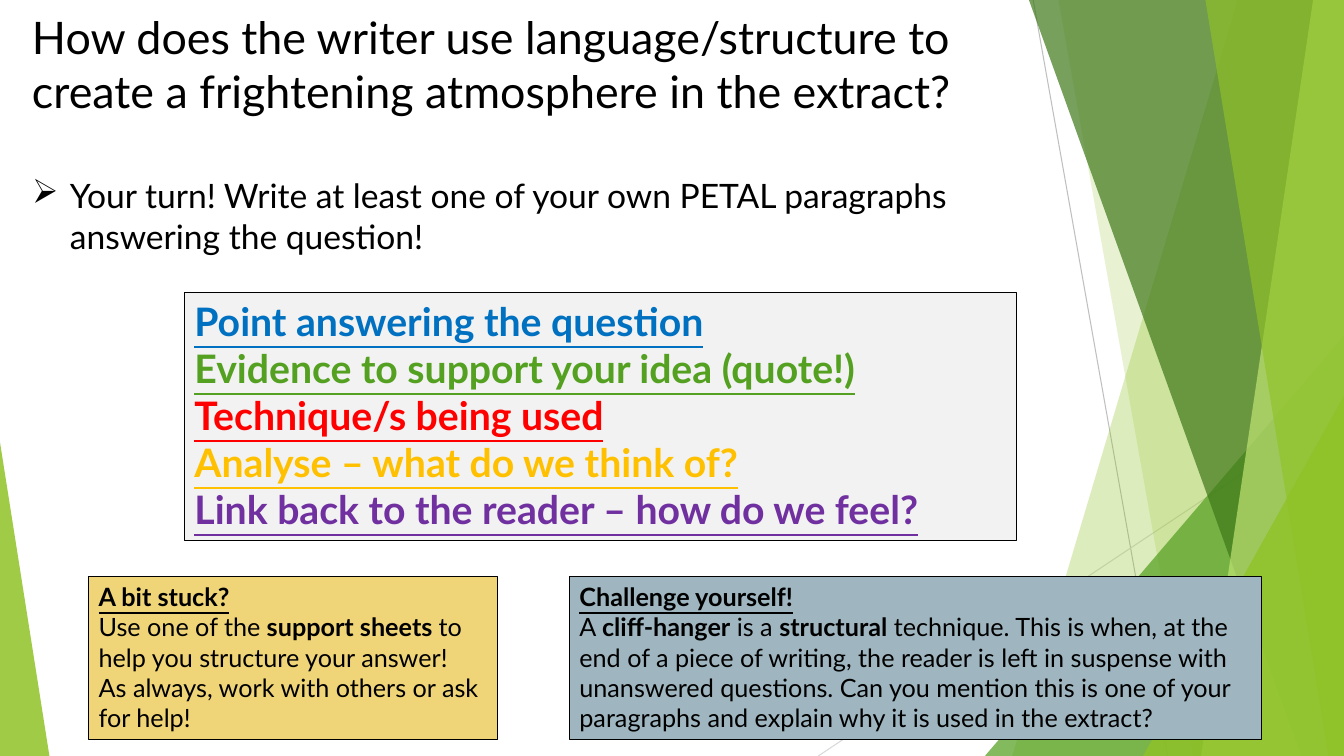
from lxml.etree import SubElement
from pptx import Presentation
from pptx.dml.color import RGBColor
from pptx.enum.shapes import MSO_CONNECTOR, MSO_SHAPE
from pptx.enum.text import MSO_ANCHOR, PP_ALIGN
from pptx.oxml.ns import qn
from pptx.util import Pt

WIDE, HIGH = 960, 540


def color(code):
    return RGBColor.from_string(code)


def write(para, text, size=18, code="000000", bold=False, under=False):
    run = para.add_run()
    run.text = text
    font = run.font
    font.name, font.size = "Lato", Pt(size)
    font.bold, font.underline = bold, under
    font.color.rgb = color(code)


class Painter:
    def __init__(self, slide, edge="000000", width=0.75):
        self.shapes = slide.shapes
        self.edge, self.width = edge, width

    def line(self, start, end, code):
        line = self.shapes.add_connector(
            MSO_CONNECTOR.STRAIGHT, *[Pt(n) for n in start + end])
        line.line.color.rgb = color(code)
        line.line.width = Pt(self.width)
        SubElement(line._element.spPr, qn("a:effectLst"))

    def tint(self, shape, code, alpha):
        shape.shadow.inherit = False
        shape.fill.solid()
        shape.fill.fore_color.rgb = color(code)
        for tag in shape._element.spPr.iter(qn("a:srgbClr")):
            SubElement(tag, qn("a:alpha"), val=str(alpha * 1000))
        shape.line.fill.background()

    def facet(self, top, base, code, alpha):
        """Band from two left corners to the right edge of the slide."""
        form = self.shapes.build_freeform(Pt(top), 0)
        form.add_line_segments([(Pt(WIDE), 0), (Pt(WIDE), Pt(HIGH)),
                                (Pt(base), Pt(HIGH))], close=True)
        self.tint(form.convert_to_shape(), code, alpha)

    def wedge(self, left, top, width, tip, code, alpha):
        """Triangle standing on the bottom edge of the slide."""
        shape = self.shapes.add_shape(
            MSO_SHAPE.ISOSCELES_TRIANGLE,
            Pt(left), Pt(top), Pt(width), Pt(HIGH - top))
        shape.adjustments[0] = tip
        self.tint(shape, code, alpha)

    def fill(self, frame, paras):
        frame.word_wrap = True
        frame.vertical_anchor = MSO_ANCHOR.TOP
        for i, runs in enumerate(paras):
            para = frame.add_paragraph() if i else frame.paragraphs[0]
            para.alignment = PP_ALIGN.LEFT
            for text, style in runs:
                write(para, text, **style)

    def panel(self, box, code, paras):
        shape = self.shapes.add_shape(
            MSO_SHAPE.RECTANGLE, *[Pt(n) for n in box])
        shape.shadow.inherit = False
        shape.fill.solid()
        shape.fill.fore_color.rgb = color(code)
        shape.line.color.rgb = color(self.edge)
        shape.line.width = Pt(self.width)
        self.fill(shape.text_frame, paras)

    def label(self, box, text, size, mark=None):
        frame = self.shapes.add_textbox(*[Pt(n) for n in box]).text_frame
        if mark:
            props = frame.paragraphs[0]._p.get_or_add_pPr()
            props.set("marL", str(Pt(27)))
            props.set("indent", str(-Pt(27)))
            SubElement(props, qn("a:buChar"), char=mark)
        self.fill(frame, [[(text, {"size": size})]])


def main():
    deck = Presentation()
    deck.slide_width, deck.slide_height = Pt(WIDE), Pt(HIGH)
    art = Painter(deck.slides.add_slide(deck.slide_layouts[6]))

    # Green backdrop
    art.line((738, 0), (834, HIGH), "BFBFBF")
    art.line((WIDE, 290), (584.5, HIGH), "D9D9D9")
    art.facet(884, 723, "90C226", 30)
    art.facet(756, 852, "90C226", 20)
    art.wedge(703.5, 240, 256.5, 1, "54A021", 72)
    art.facet(735, 929.5, "3F7819", 70)
    art.facet(938, 858, "C0E474", 70)
    art.facet(861, 949, "90C226", 65)
    art.wedge(816.5, 283, 143.5, 1, "90C226", 80)
    art.wedge(0, 316, 35.3, 0, "90C226", 85)

    # Help and challenge panels
    head, bold = {"bold": True, "under": True}, {"bold": True}
    art.panel((63.4, 411.8, 292.3, 116.6), "F0D578", [
        [("A bit stuck?", head)],
        [("Use one of the", {}), (" support sheets ", bold),
         ("to help you structure your answer!", {})],
        [("As always, work with others or ask for help!", {})]])
    art.panel((406.8, 411.8, 494.6, 116.6), "9FB6C0", [
        [("Challenge yourself!", head)],
        [("A ", {}), ("cliff-hanger", bold), (" is a ", {}),
         ("structural", bold),
         (" technique. This is when, at the end of a piece of writing, "
          "the reader is left in suspense with unanswered questions. "
          "Can you mention this is one of your paragraphs and explain "
          "why it is used in the extract?", {})]])

    # Task and question
    art.label((15.8, 121.7, 725.8, 116.6),
              "Your turn! Write at least one of your own PETAL paragraphs "
              "answering the question!", 24, mark="➢")
    art.label((15.8, 3.6, 731.5, 85),
              "How does the writer use language/structure to create a "
              "frightening atmosphere in the extract?", 32)

    # PETAL steps
    steps = [("Point answering the question", "0070C0"),
             ("Evidence to support your idea (quote!)", "54A021"),
             ("Technique/s being used", "FF0000"),
             ("Analyse – what do we think of?", "FFC000"),
             ("Link back to the reader – how do we feel?", "7030A0")]
    art.panel((131.8, 208.8, 594, 177.1), "F2F2F2", [
        [(text, {"size": 28, "code": code, **head})]
        for text, code in steps])

    deck.save("out.pptx")


if __name__ == "__main__":
    main()
